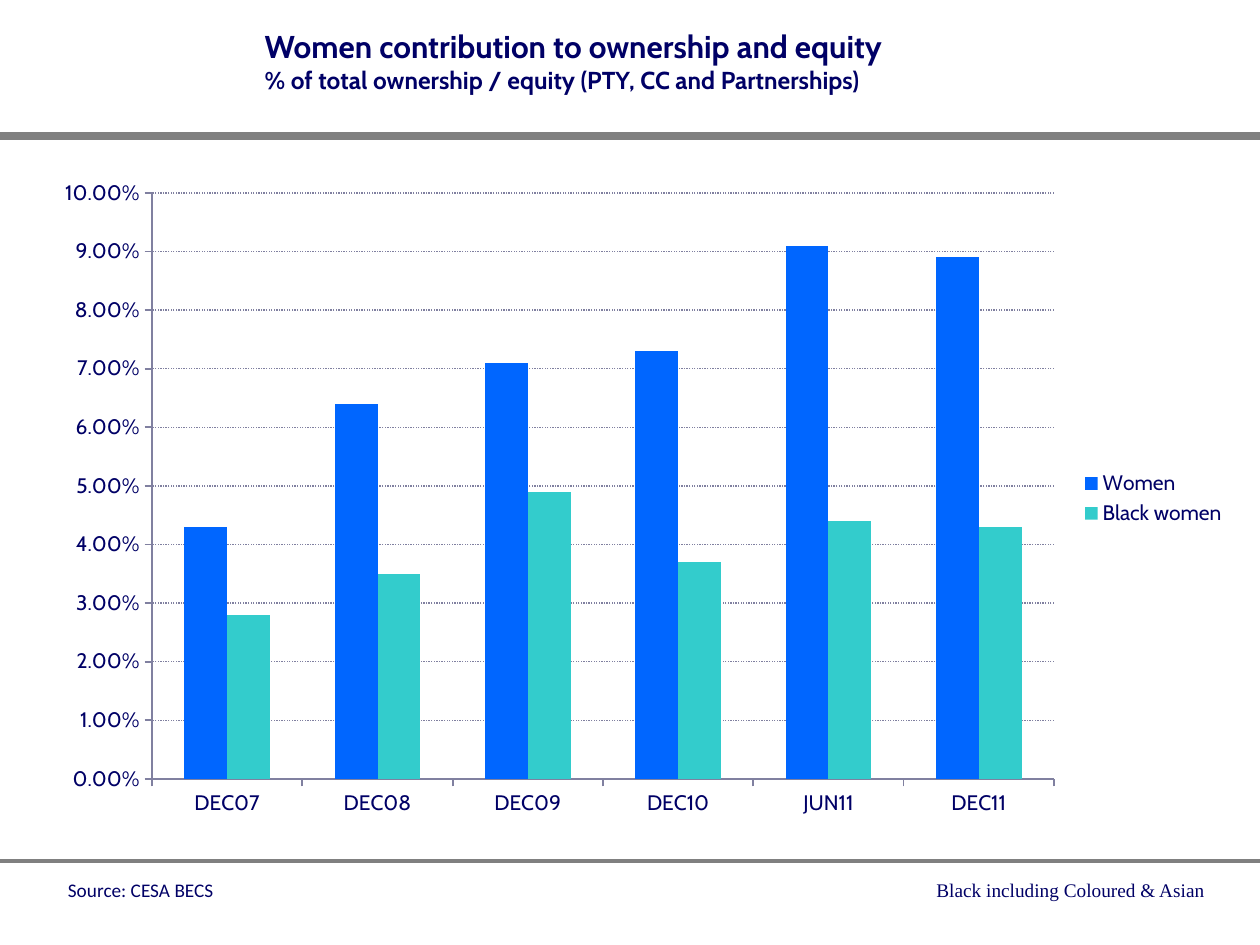
from dataclasses import dataclass

from lxml.etree import SubElement
from pptx import Presentation
from pptx.chart.data import CategoryChartData
from pptx.dml.color import RGBColor
from pptx.enum.chart import XL_CHART_TYPE as ChartType
from pptx.enum.chart import XL_LEGEND_POSITION as LegendPosition
from pptx.enum.chart import XL_TICK_MARK as TickMark
from pptx.enum.dml import MSO_LINE_DASH_STYLE as Dash
from pptx.enum.shapes import MSO_CONNECTOR as Connector
from pptx.enum.text import MSO_ANCHOR as Anchor
from pptx.enum.text import MSO_AUTO_SIZE as AutoSize
from pptx.enum.text import PP_ALIGN as Align
from pptx.oxml import parse_xml
from pptx.oxml.ns import nsdecls, qn
from pptx.util import Emu, Pt

PX = 914400 // 126
WIDTH, HEIGHT = 1260, 945


@dataclass(frozen=True)
class Theme:
    ink: RGBColor = RGBColor(0x00, 0x00, 0x66)
    rule: RGBColor = RGBColor(0x80, 0x80, 0x80)
    axis: RGBColor = RGBColor(0x80, 0x80, 0xA0)
    women: RGBColor = RGBColor(0x00, 0x66, 0xFF)
    black_women: RGBColor = RGBColor(0x33, 0xCC, 0xCC)
    font: str = "Cabin"
    title: int = 18
    subtitle: int = 14
    label: int = 12
    note: int = 11


@dataclass(frozen=True)
class Area:
    left: int
    top: int
    width: int
    height: int

    def emu(self) -> tuple:
        return tuple(Emu(n * PX) for n in (self.left, self.top, self.width, self.height))


@dataclass(frozen=True)
class Rule:
    y: int
    weight: int


@dataclass(frozen=True)
class Note:
    text: str
    area: Area
    font: str
    align: Align


@dataclass(frozen=True)
class Series:
    name: str
    values: tuple
    color: RGBColor


THEME = Theme()
RULES = (Rule(136, 5), Rule(861, 2))
TITLE_AREA = Area(252, 21, 976, 81)
TITLE_LINES = (
    ("Women contribution to ownership and equity", THEME.title),
    ("% of total ownership / equity (PTY, CC and Partnerships)", THEME.subtitle),
)
CHART_AREA = Area(42, 168, 1197, 661)
PLOT_AREA = Area(152, 193, 902, 586)
PERIODS = ("DEC07", "DEC08", "DEC09", "DEC10", "JUN11", "DEC11")
SERIES = (
    Series("Women", (0.043, 0.064, 0.071, 0.073, 0.091, 0.089), THEME.women),
    Series("Black women", (0.028, 0.035, 0.049, 0.037, 0.044, 0.043), THEME.black_women),
)
NOTES = (
    Note("Black including Coloured & Asian", Area(924, 872, 296, 36), "Times New Roman", Align.LEFT),
    Note("Source: CESA BECS", Area(53, 872, 173, 36), "Calibri", Align.RIGHT),
)


def style_font(font, size: int, name: str = THEME.font, bold: bool = False) -> None:
    font.size, font.name, font.bold = Pt(size), name, bold
    font.color.rgb = THEME.ink


def add_rule(slide, rule: Rule) -> None:
    y = Emu(rule.y * PX)
    line = slide.shapes.add_connector(Connector.STRAIGHT, 0, y, Emu(WIDTH * PX), y)
    line.line.color.rgb, line.line.width = THEME.rule, Pt(rule.weight)
    SubElement(line._element.spPr, qn("a:effectLst"))


def fill_title(slide) -> None:
    title = slide.shapes.title
    title.left, title.top, title.width, title.height = TITLE_AREA.emu()
    frame = title.text_frame
    frame.word_wrap, frame.auto_size = True, AutoSize.NONE
    frame.vertical_anchor = Anchor.TOP
    frame.text = "\n".join(text for text, _ in TITLE_LINES)
    for para, (_, size) in zip(frame.paragraphs, TITLE_LINES):
        para.alignment = Align.LEFT
        para.space_before = Pt(0)
        para.line_spacing = 1.0
        style_font(para.font, size, bold=True)


def add_note(slide, note: Note) -> None:
    frame = slide.shapes.add_textbox(*note.area.emu()).text_frame
    frame.word_wrap, frame.auto_size = False, AutoSize.SHAPE_TO_FIT_TEXT
    para = frame.paragraphs[0]
    para.text, para.alignment = note.text, note.align
    style_font(para.font, THEME.note, note.font)


def place_plot(chart) -> None:
    """Fix the inner plot area as fractions of the chart."""
    fractions = {
        "x": (PLOT_AREA.left - CHART_AREA.left) / CHART_AREA.width,
        "y": (PLOT_AREA.top - CHART_AREA.top) / CHART_AREA.height,
        "w": PLOT_AREA.width / CHART_AREA.width,
        "h": PLOT_AREA.height / CHART_AREA.height,
    }
    sizes = "".join(f'<c:{key} val="{value:.4f}"/>' for key, value in fractions.items())
    layout = parse_xml(
        f'<c:layout {nsdecls("c")}><c:manualLayout><c:layoutTarget val="inner"/>'
        f'<c:xMode val="edge"/><c:yMode val="edge"/>{sizes}</c:manualLayout></c:layout>'
    )
    plot_area = chart._chartSpace.chart.plotArea
    for old in plot_area.findall(qn("c:layout")):
        plot_area.remove(old)
    plot_area.insert(0, layout)


def add_equity_chart(slide) -> None:
    data = CategoryChartData(number_format="0.00%")
    data.categories = PERIODS
    for series in SERIES:
        data.add_series(series.name, series.values)
    chart = slide.shapes.add_chart(ChartType.COLUMN_CLUSTERED, *CHART_AREA.emu(), data).chart
    chart.has_title = False
    style_font(chart.font, THEME.label)
    place_plot(chart)

    # Columns
    plot = chart.plots[0]
    plot.gap_width, plot.overlap, plot.vary_by_categories = 150, 0, False
    for drawn, series in zip(plot.series, SERIES):
        drawn.format.fill.solid()
        drawn.format.fill.fore_color.rgb = series.color
        drawn.invert_if_negative = False

    # Axes and gridlines
    for axis in (chart.category_axis, chart.value_axis):
        axis.major_tick_mark, axis.minor_tick_mark = TickMark.OUTSIDE, TickMark.NONE
        axis.format.line.color.rgb, axis.format.line.width = THEME.axis, Pt(1)
        style_font(axis.tick_labels.font, THEME.label)
    values = chart.value_axis
    values.minimum_scale, values.maximum_scale, values.major_unit = 0, 0.1, 0.01
    values.tick_labels.number_format = "0.00%"
    values.tick_labels.number_format_is_linked = False
    values.has_major_gridlines = True
    grid = values.major_gridlines.format.line
    grid.color.rgb, grid.width, grid.dash_style = THEME.axis, Pt(0.75), Dash.ROUND_DOT

    # Legend
    chart.has_legend = True
    chart.legend.position = LegendPosition.RIGHT
    chart.legend.include_in_layout = False
    style_font(chart.legend.font, THEME.label)


def main() -> None:
    deck = Presentation()
    deck.slide_width, deck.slide_height = Emu(WIDTH * PX), Emu(HEIGHT * PX)
    slide = deck.slides.add_slide(deck.slide_layouts[5])
    for rule in RULES:
        add_rule(slide, rule)
    add_equity_chart(slide)
    fill_title(slide)
    for note in NOTES:
        add_note(slide, note)
    deck.save("out.pptx")


if __name__ == "__main__":
    main()
